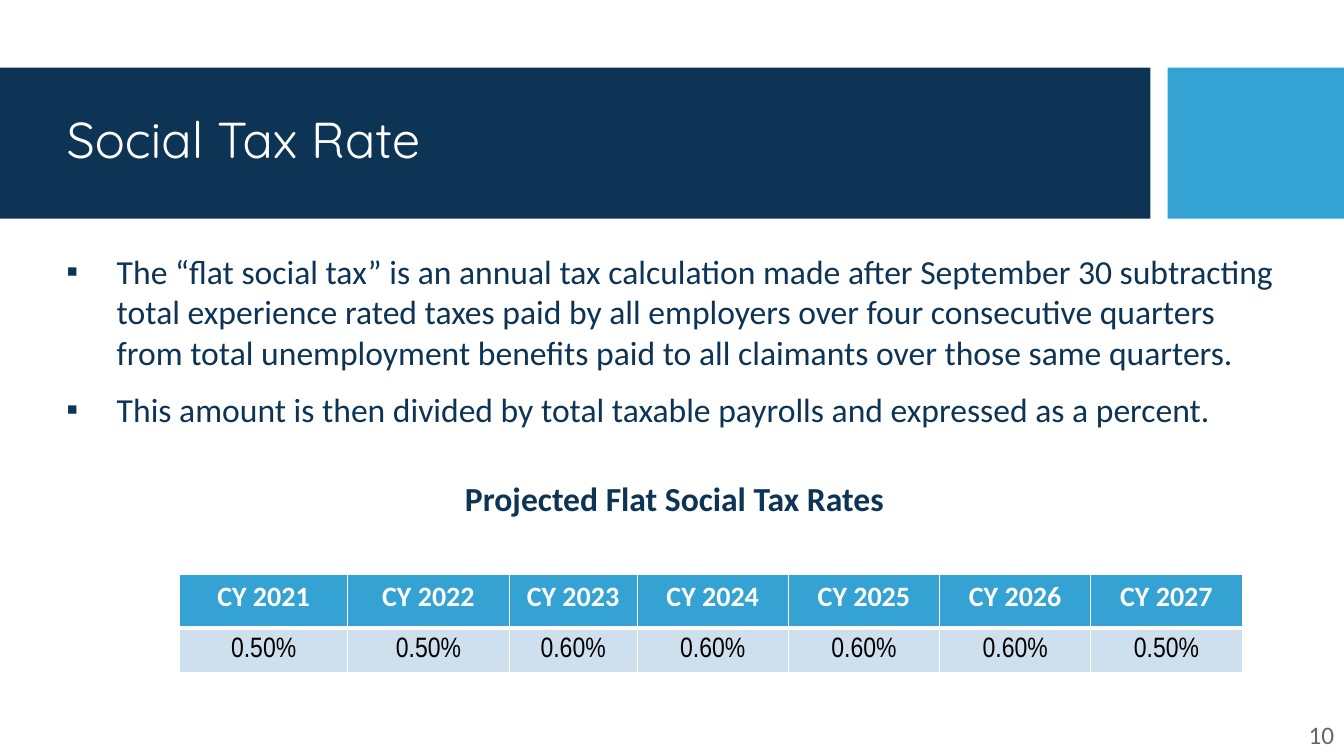
from lxml import etree
from pptx import Presentation
from pptx.dml.color import RGBColor
from pptx.enum import shapes, text
from pptx.oxml import parse_xml
from pptx.oxml.ns import nsdecls, qn
from pptx.util import Inches, Pt

COLORS = {"navy": "0D3455", "blue": "34A2D2", "pale": "CEE0EE",
          "white": "FFFFFF", "black": "000000", "gray": "666666"}


def style(p, size, color, font="Calibri", bold=False, align=text.PP_ALIGN.LEFT):
    p.alignment = align
    for r in p.runs:
        r.font.size = Pt(size)
        r.font.name = font
        r.font.bold = bold
        r.font.color.rgb = RGBColor.from_string(COLORS[color])


def add_border(cell, side, width):
    cell._tc.get_or_add_tcPr().append(parse_xml(
        f'<a:ln{side} {nsdecls("a")} w="{Pt(width)}"><a:solidFill>'
        f'<a:srgbClr val="{COLORS["white"]}"/></a:solidFill></a:ln{side}>'))


prs = Presentation()
prs.slide_width, prs.slide_height = Inches(13.33), Inches(7.5)
s = prs.slides.add_slide(prs.slide_layouts[5])

# Header bars, with the title in front
for left, width, color in [(0, 11.41, "navy"), (11.58, 1.75, "blue")]:
    bar = s.shapes.add_shape(shapes.MSO_SHAPE.RECTANGLE, Inches(left), Inches(0.67),
                             Inches(width), Inches(1.5))
    bar.shadow.inherit = False
    bar.fill.solid()
    bar.fill.fore_color.rgb = RGBColor.from_string(COLORS[color])
    bar.line.fill.background()

title = s.shapes.title
s.shapes._spTree.append(title._element)
title.left, title.top = Inches(0.56), Inches(0.82)
title.width, title.height = Inches(10.51), Inches(1.18)
title.text_frame.text = "Social Tax Rate"
title.text_frame.vertical_anchor = text.MSO_ANCHOR.MIDDLE
title.text_frame.paragraphs[0].line_spacing = 0.9
style(title.text_frame.paragraphs[0], 36, "white", "Quicksand")

# Page number
number = s.shapes.add_textbox(Inches(12.62), Inches(7.09), Inches(0.71), Inches(0.41))
number.text_frame.word_wrap = True
number.text_frame.text = "10"
style(number.text_frame.paragraphs[0], 18, "gray", align=text.PP_ALIGN.RIGHT)

# Bullets and table heading
body = s.shapes.add_textbox(Inches(0.56), Inches(2.44), Inches(12.26), Inches(2.75))
tf = body.text_frame
tf.word_wrap = True
tf.text = "\n".join([
    "The “flat social tax” is an annual tax calculation made after September 30 "
    "subtracting total experience rated taxes paid by all employers over four "
    "consecutive quarters from total unemployment benefits paid to all claimants "
    "over those same quarters.",
    "This amount is then divided by total taxable payrolls and expressed as a percent.",
    "Projected Flat Social Tax Rates"])
*bullets, heading = tf.paragraphs
for p in bullets:
    pPr = p._p.get_or_add_pPr()
    pPr.set("marL", str(Inches(0.5)))
    pPr.set("indent", str(-Inches(0.5)))
    etree.SubElement(pPr, qn("a:buFont")).set("typeface", "Arial")
    etree.SubElement(pPr, qn("a:buChar")).set("char", "▪")
    style(p, 24, "navy")
bullets[1].space_before = Pt(12)
heading.space_before = Pt(41.5)
heading.line_spacing = Pt(22)
style(heading, 24, "navy", bold=True, align=text.PP_ALIGN.CENTER)

# Rates by calendar year
rates = ["0.50%", "0.50%", "0.60%", "0.60%", "0.60%", "0.60%", "0.50%"]
col_widths = [1.67, 1.6, 1.27] + [1.5] * 4
table = s.shapes.add_table(2, len(rates), Inches(1.78), Inches(5.7),
                           Inches(10.54), Inches(0.97)).table
table.rows[0].height, table.rows[1].height = Inches(0.53), Inches(0.44)
for col, (rate, width) in enumerate(zip(rates, col_widths)):
    table.columns[col].width = Inches(width)
    year_cell, rate_cell = table.cell(0, col), table.cell(1, col)
    year_cell.text, rate_cell.text = f"CY {2021 + col}", rate
    style(year_cell.text_frame.paragraphs[0], 20, "white", bold=True,
          align=text.PP_ALIGN.CENTER)
    style(rate_cell.text_frame.paragraphs[0], 20, "black", "Arial Narrow",
          align=text.PP_ALIGN.CENTER)
    rate_cell.vertical_anchor = text.MSO_ANCHOR.MIDDLE
    rate_cell.margin_left = rate_cell.margin_right = rate_cell.margin_top = Inches(0.01)
    rate_cell.margin_bottom = 0
    for cell, fill, bottom, top in [(year_cell, "blue", 3, 1), (rate_cell, "pale", 1, 3)]:
        for side, line_width in zip("LRTB", (1, 1, top, bottom)):
            add_border(cell, side, line_width)
        cell.fill.solid()
        cell.fill.fore_color.rgb = RGBColor.from_string(COLORS[fill])

prs.save("out.pptx")
